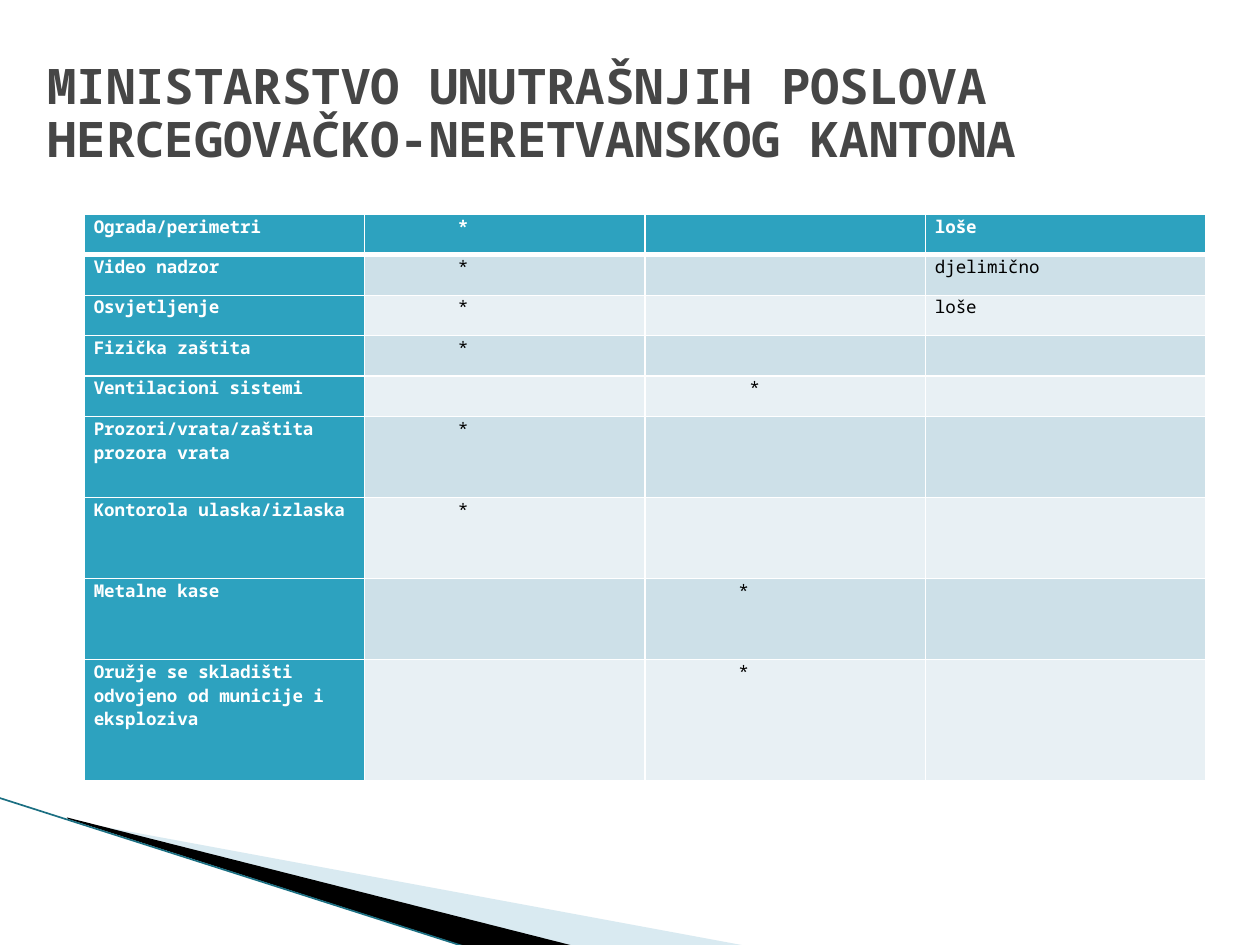
from lxml import etree
from pptx import Presentation
from pptx.dml.color import RGBColor
from pptx.enum.shapes import MSO_CONNECTOR
from pptx.enum.text import MSO_ANCHOR, PP_ALIGN
from pptx.oxml.ns import qn
from pptx.util import Cm, Pt

STRAIGHT = MSO_CONNECTOR.STRAIGHT
MIDDLE = MSO_ANCHOR.MIDDLE
LEFT, JUSTIFY = PP_ALIGN.LEFT, PP_ALIGN.JUSTIFY

COLORS = {
    "title": "464646",
    "header": "2DA2BF",
    "band_dark": "CDE0E8",
    "band_light": "E8F0F4",
    "white": "FFFFFF",
    "black": "000000",
    "pale_wedge": "A0CBDC",
    "edge": "1B6F82",
}

MARK = "*"
MARK_INDENT = 1.69
# Each row: height in units, then the four cells
SECURITY_ROWS = [
    (1, ["Ograda/perimetri", MARK, "", "loše"]),
    (1, ["Video nadzor", MARK, "", "djelimično"]),
    (1, ["Osvjetljenje", MARK, "", "loše"]),
    (1, ["Fizička zaštita", MARK, "", ""]),
    (1, ["Ventilacioni sistemi", "", MARK, ""]),
    (2, ["Prozori/vrata/zaštita prozora vrata", MARK, "", ""]),
    (2, ["Kontorola ulaska/izlaska", MARK, "", ""]),
    (2, ["Metalne kase", "", MARK, ""]),
    (3, ["Oružje se skladišti odvojeno od municije i eksploziva", "", MARK, ""]),
]
LEFT_ALIGNED = {"djelimično", SECURITY_ROWS[-1][1][0]}
WIDER_INDENTS = {(4, 2): 1.91}


class SlideBuilder:
    font = "Noto Sans Mono"
    title_size = 28
    cell_size = 10

    def __init__(self, slide):
        self.slide = slide
        self.shapes = slide.shapes

    def color(self, name):
        return RGBColor.from_string(COLORS[name])

    def style_runs(self, paragraph, size, color, bold):
        for run in paragraph.runs:
            run.font.name = self.font
            run.font.size = Pt(size)
            run.font.bold = bold
            run.font.color.rgb = self.color(color)

    def wedge(self, points, color, opacity=100):
        corners = [(Cm(x), Cm(y)) for x, y in points]
        builder = self.shapes.build_freeform(*corners[0])
        builder.add_line_segments(corners[1:], close=True)
        wedge = builder.convert_to_shape()
        wedge.shadow.inherit = False
        wedge.line.fill.background()
        wedge.fill.solid()
        wedge.fill.fore_color.rgb = self.color(color)
        if opacity < 100:
            fill_color = wedge.fill._xPr.find(qn("a:solidFill"))[0]
            etree.SubElement(fill_color, qn("a:alpha"), val=str(opacity * 1000))

    def line(self, start, end, color, width):
        line = self.shapes.add_connector(
            STRAIGHT, *(Cm(value) for value in (*start, *end)))
        line.line.color.rgb = self.color(color)
        line.line.width = Pt(width)
        etree.SubElement(line._element.spPr, qn("a:effectLst"))

    def title(self, text, left, top, width, height):
        box = self.shapes.add_textbox(Cm(left), Cm(top), Cm(width), Cm(height))
        frame = box.text_frame
        frame.word_wrap = True
        frame.vertical_anchor = MIDDLE
        frame.text = text
        paragraph = frame.paragraphs[0]
        paragraph.line_spacing = 0.9
        self.style_runs(paragraph, self.title_size, "title", True)

    def borders(self, cell, is_header_row, is_below_header):
        properties = cell._tc.get_or_add_tcPr()
        widths = {"lnL": 1, "lnR": 1,
                  "lnT": 3 if is_below_header else 1,
                  "lnB": 3 if is_header_row else 1}
        for side, width in widths.items():
            border = etree.SubElement(
                properties, qn(f"a:{side}"), w=str(Pt(width)))
            fill = etree.SubElement(border, qn("a:solidFill"))
            etree.SubElement(fill, qn("a:srgbClr"), val=COLORS["white"])

    def cell(self, cell, text, row, column):
        is_header = row == 0 or column == 0
        self.borders(cell, row == 0, row == 1)
        band = "band_dark" if row % 2 else "band_light"
        cell.fill.solid()
        cell.fill.fore_color.rgb = self.color("header" if is_header else band)
        cell.margin_left = cell.margin_right = Cm(0.19)
        cell.margin_top = cell.margin_bottom = 0
        cell.text_frame.text = text
        paragraph = cell.text_frame.paragraphs[0]
        paragraph.alignment = LEFT if text in LEFT_ALIGNED else JUSTIFY
        if text == MARK:
            indent = WIDER_INDENTS.get((row, column), MARK_INDENT)
            properties = paragraph._p.get_or_add_pPr()
            properties.set("marL", str(Cm(indent)))
        self.style_runs(paragraph, self.cell_size,
                        "white" if is_header else "black", is_header)

    def table(self, rows, left, top, width, height):
        columns = len(rows[0][1])
        unit = height / sum(units for units, _ in rows)
        table = self.shapes.add_table(
            len(rows), columns, Cm(left), Cm(top), Cm(width), Cm(height)).table
        table.first_col = True
        for column in table.columns:
            column.width = Cm(width / columns)
        for row, (units, texts) in enumerate(rows):
            table.rows[row].height = Cm(unit * units)
            for column, text in enumerate(texts):
                self.cell(table.cell(row, column), text, row, column)


def main():
    presentation = Presentation()
    presentation.slide_width = Cm(25.4)
    presentation.slide_height = Cm(19.05)
    blank = presentation.slide_layouts[6]
    builder = SlideBuilder(presentation.slides.add_slide(blank))

    builder.wedge([(1.4, 16.54), (15.11, 19.08), (11.58, 19.08), (1.4, 16.51)],
                  "pale_wedge", opacity=40)
    builder.wedge([(1.35, 16.48), (11.61, 19.08), (9.45, 19.1), (1.37, 16.51)],
                  "black")
    builder.line((-0.03, 16.08), (9.42, 19.1), "edge", 0.95)
    builder.table(SECURITY_ROWS, 1.7, 4.32, 22.61, 11.43)
    builder.title("MINISTARSTVO UNUTRAŠNJIH POSLOVA HERCEGOVAČKO-NERETVANSKOG KANTONA",
                  0.71, 0.74, 22.86, 3.18)
    presentation.save("out.pptx")


if __name__ == "__main__":
    main()
